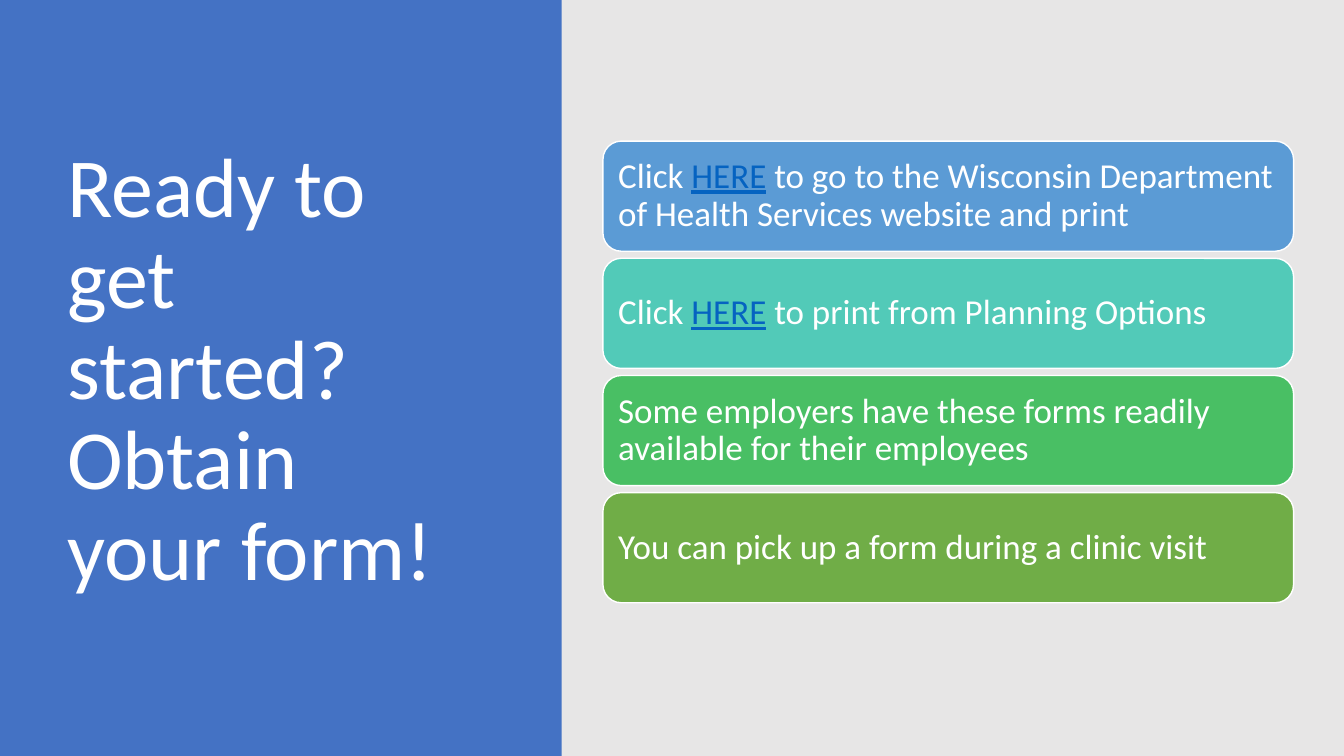
"""Builds a slide on where to obtain a form."""
from pptx import Presentation
from pptx.dml.color import RGBColor
from pptx.enum.shapes import MSO_SHAPE
from pptx.enum.text import MSO_ANCHOR, PP_ALIGN
from pptx.util import Inches, Pt

WHITE = RGBColor(0xFF, 0xFF, 0xFF)
BACKGROUND = RGBColor(0xE7, 0xE6, 0xE6)
PANEL_BLUE = RGBColor(0x44, 0x72, 0xC4)
LINK_BLUE = RGBColor(0x05, 0x63, 0xC1)
SKY = RGBColor(0x5B, 0x9B, 0xD5)
TEAL = RGBColor(0x52, 0xCA, 0xB8)
GREEN = RGBColor(0x49, 0xBF, 0x64)
OLIVE = RGBColor(0x70, 0xAD, 0x47)

FONT = "Calibri"
LINK_WORD = "HERE"
OPTIONS = [
    (SKY, "Click HERE to go to the Wisconsin Department of Health Services website and print"),
    (TEAL, "Click HERE to print from Planning Options"),
    (GREEN, "Some employers have these forms readily available for their employees"),
    (OLIVE, "You can pick up a form during a clinic visit"),
]


def add_block(page, kind, left, top, width, height, color):
    """Add a filled shape without shadow or outline."""
    block = page.shapes.add_shape(
        kind, Inches(left), Inches(top), Inches(width), Inches(height))
    block.shadow.inherit = False
    block.fill.solid()
    block.fill.fore_color.rgb = color
    block.line.fill.background()
    return block


def style_text(frame, size):
    """Wrap and centre the frame vertically, and return its styled paragraph."""
    frame.word_wrap = True
    frame.vertical_anchor = MSO_ANCHOR.MIDDLE
    para = frame.paragraphs[0]
    para.alignment = PP_ALIGN.LEFT
    para.line_spacing = 0.9
    para.font.name = FONT
    para.font.size = Pt(size)
    para.font.color.rgb = WHITE
    return para


def add_title_panel(page, left, top, width, height):
    """Draw the blue panel with the slide title."""
    add_block(page, MSO_SHAPE.RECTANGLE, left, top, width, height, PANEL_BLUE)
    title = page.shapes.add_textbox(
        Inches(left + 0.57), Inches(top + 0.68), Inches(width - 1.41), Inches(height - 1.48))
    para = style_text(title.text_frame, 60)
    para.add_run().text = "Ready to get started? Obtain your form!"


def add_option_text(para, text):
    """Write the text, with the link word underlined in blue."""
    before, link, after = text.partition(LINK_WORD)
    for words in filter(None, (before, link, after)):
        span = para.add_run()
        span.text = words
        if words == LINK_WORD:
            span.font.color.rgb = LINK_BLUE
            span.font.underline = True


def add_options(page, left, top, width, height, gap=0.07):
    """Stack one rounded box per option, evenly spaced."""
    box_height = (height - gap * (len(OPTIONS) - 1)) / len(OPTIONS)
    for row, (color, text) in enumerate(OPTIONS):
        box = add_block(page, MSO_SHAPE.ROUNDED_RECTANGLE, left,
                        top + row * (box_height + gap), width, box_height, color)
        box.line.color.rgb = WHITE
        box.line.width = Pt(1)
        frame = box.text_frame
        frame.margin_left = frame.margin_right = Inches(0.1)
        frame.margin_top = frame.margin_bottom = Inches(0.1)
        add_option_text(style_text(frame, 25), text)


def main():
    """Build and save the deck."""
    deck = Presentation()
    deck.slide_width, deck.slide_height = Inches(13.33), Inches(7.5)
    page = deck.slides.add_slide(deck.slide_layouts[6])
    page.background.fill.solid()
    page.background.fill.fore_color.rgb = BACKGROUND
    add_title_panel(page, 0, 0, 5.57, 7.5)
    add_options(page, 5.98, 1.4, 6.85, 4.58)
    deck.save("out.pptx")


if __name__ == "__main__":
    main()
